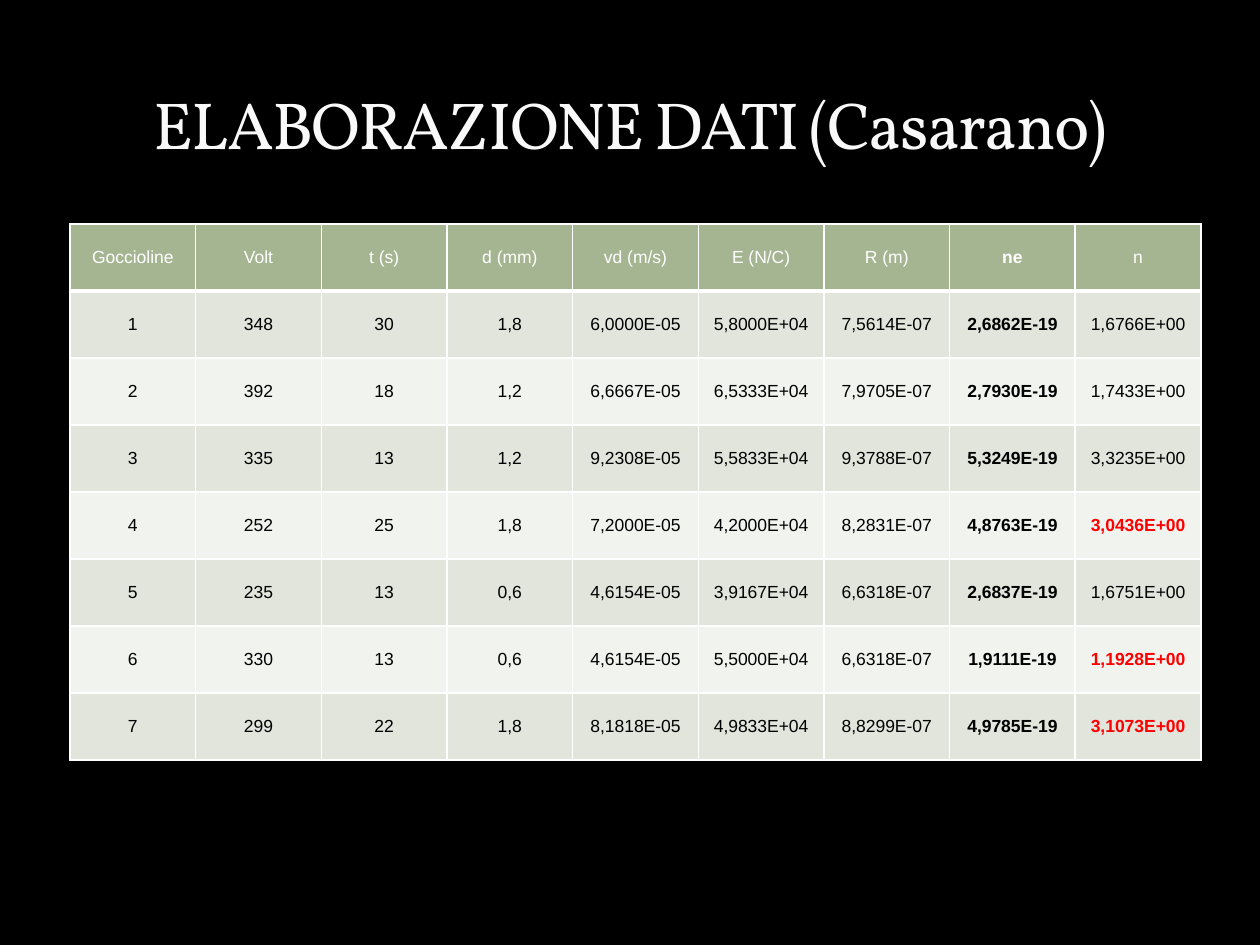
from typing import NamedTuple

from lxml.etree import SubElement
from pptx import Presentation
from pptx.dml.color import RGBColor
from pptx.enum.text import MSO_ANCHOR as Anchor, PP_ALIGN as Align
from pptx.oxml import parse_xml
from pptx.oxml.ns import nsdecls, qn
from pptx.util import Emu, Pt

PX = 7257.14  # EMU per px at 126 px to the inch
WHITE, BLACK, RED = "FFFFFF", "000000", "FF0000"
HEADER_FILL, BANDS = "A5B592", ("E1E5DC", "F0F3EE")


class Box(NamedTuple):
    left: int
    top: int
    width: int
    height: int


class Drop(NamedTuple):
    volt: str
    t: str
    d: str
    speed: str
    field: str
    radius: str
    ne: str
    n: str
    marked: bool = False


TITLE_BOX = Box(63, 39, 1134, 130)
TABLE_BOX = Box(70, 224, 1131, 536)
HEADERS = ("Goccioline", "Volt", "t (s)", "d (mm)", "vd (m/s)", "E (N/C)", "R (m)", "ne", "n")
NE_COL, N_COL = HEADERS.index("ne"), HEADERS.index("n")
DROPS = (
    Drop("348", "30", "1,8", "6,0000E-05", "5,8000E+04", "7,5614E-07", "2,6862E-19", "1,6766E+00"),
    Drop("392", "18", "1,2", "6,6667E-05", "6,5333E+04", "7,9705E-07", "2,7930E-19", "1,7433E+00"),
    Drop("335", "13", "1,2", "9,2308E-05", "5,5833E+04", "9,3788E-07", "5,3249E-19", "3,3235E+00"),
    Drop("252", "25", "1,8", "7,2000E-05", "4,2000E+04", "8,2831E-07", "4,8763E-19", "3,0436E+00", True),
    Drop("235", "13", "0,6", "4,6154E-05", "3,9167E+04", "6,6318E-07", "2,6837E-19", "1,6751E+00"),
    Drop("330", "13", "0,6", "4,6154E-05", "5,5000E+04", "6,6318E-07", "1,9111E-19", "1,1928E+00", True),
    Drop("299", "22", "1,8", "8,1818E-05", "4,9833E+04", "8,8299E-07", "4,9785E-19", "3,1073E+00", True),
)


def px(n: float) -> Emu:
    return Emu(round(n * PX))


def rgb(color: str) -> RGBColor:
    return RGBColor.from_string(color)


def write(tf, text: str, *, size: int, font: str, color: str, bold: bool = False):
    """Put one centred run in a text frame and return it."""
    p = tf.paragraphs[0]
    p.alignment = Align.CENTER
    r = p.add_run()
    r.text = text
    r.font.size, r.font.name, r.font.bold = Pt(size), font, bold
    r.font.color.rgb = rgb(color)
    return r


def add_title(s, text: str) -> None:
    tf = s.shapes.add_textbox(*map(px, TITLE_BOX)).text_frame
    tf.word_wrap = True
    tf.vertical_anchor = Anchor.BOTTOM
    r = write(tf, text, size=38, font="Vollkorn", color="F9F9F9")
    rPr = r.font._element
    rPr.set("spc", "-100")
    rPr.insert(0, parse_xml(
        f'<a:ln {nsdecls("a")} w="3175"><a:solidFill><a:srgbClr val="3C4422">'
        '<a:alpha val="25000"/></a:srgbClr></a:solidFill></a:ln>'))


def set_borders(cell, top: int = 1, bottom: int = 1) -> None:
    """Draw white borders; top and bottom widths are in points."""
    tcPr = cell._tc.get_or_add_tcPr()
    for side, width in (("L", 1), ("R", 1), ("T", top), ("B", bottom)):
        ln = SubElement(tcPr, qn(f"a:ln{side}"), w=str(Pt(width)))
        SubElement(SubElement(ln, qn("a:solidFill")), qn("a:srgbClr"), val=WHITE)


def fill_cell(cell, text: str, row: int, col: int, marked: bool) -> None:
    header = row == 0
    red = marked and col == N_COL
    set_borders(cell, top=3 if row == 1 else 1, bottom=3 if header else 1)
    cell.fill.solid()
    cell.fill.fore_color.rgb = rgb(HEADER_FILL if header else BANDS[(row - 1) % 2])
    cell.margin_left = cell.margin_right = cell.margin_top = cell.margin_bottom = 0
    cell.vertical_anchor = Anchor.MIDDLE
    write(cell.text_frame, text, size=10, font="Arial", bold=red or col == NE_COL,
          color=WHITE if header else RED if red else BLACK)


def add_data_table(s) -> None:
    rows = [(HEADERS, False)]
    rows += [((str(i), *drop[:-1]), drop.marked) for i, drop in enumerate(DROPS, 1)]
    table = s.shapes.add_table(len(rows), len(HEADERS), *map(px, TABLE_BOX)).table
    table.horz_banding = False
    for column in table.columns:
        column.width = px(TABLE_BOX.width / len(HEADERS))
    for i, (values, marked) in enumerate(rows):
        table.rows[i].height = px(TABLE_BOX.height / len(rows))
        for j, text in enumerate(values):
            fill_cell(table.cell(i, j), text, i, j, marked)


def main() -> None:
    prs = Presentation()
    prs.slide_width, prs.slide_height = px(1260), px(945)
    s = prs.slides.add_slide(prs.slide_layouts[6])
    s.background.fill.solid()
    s.background.fill.fore_color.rgb = rgb(BLACK)
    add_data_table(s)
    add_title(s, "ELABORAZIONE DATI (Casarano)")
    prs.save("out.pptx")


if __name__ == "__main__":
    main()
